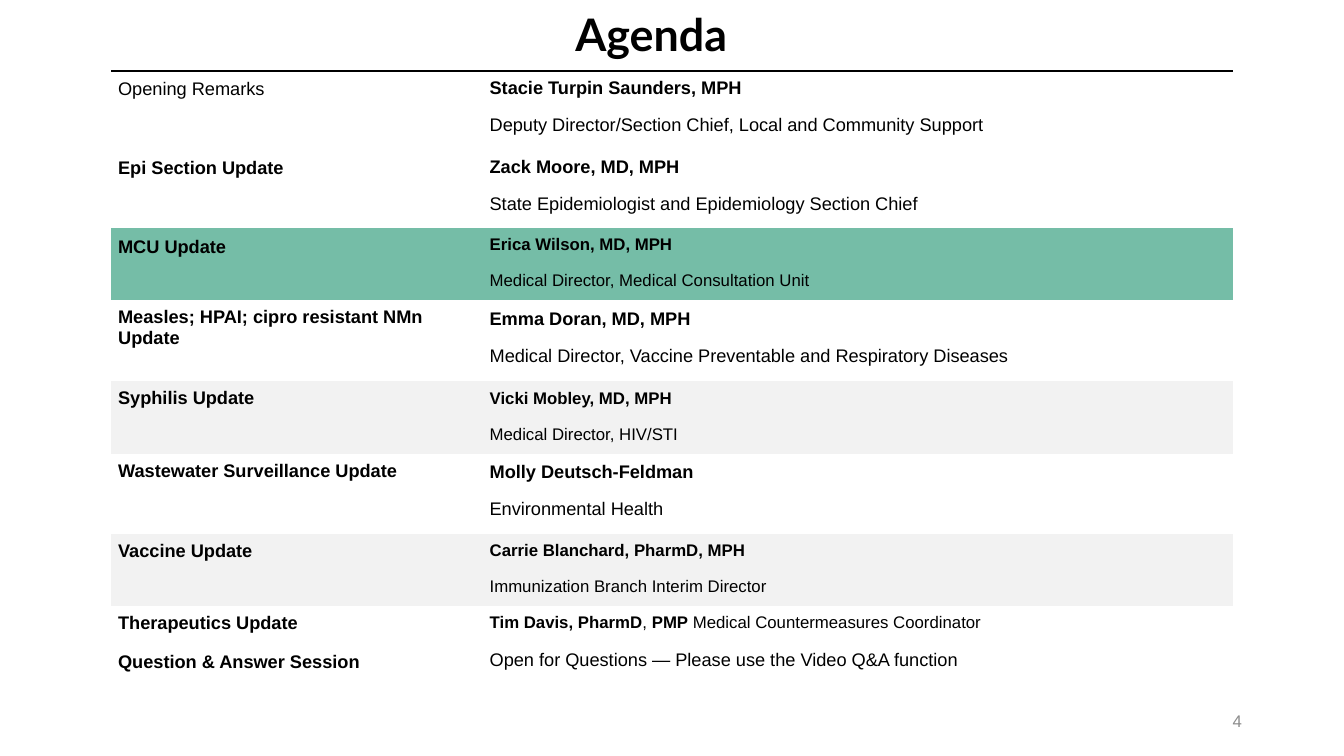
import pptx
import pptx.dml.color
import pptx.enum.text
import pptx.oxml
import pptx.oxml.ns
import pptx.util
from pptx.util import Pt

BLACK = pptx.dml.color.RGBColor(0x00, 0x00, 0x00)
GREY = pptx.dml.color.RGBColor(0x8C, 0x8C, 0x8C)
GREEN = pptx.dml.color.RGBColor(0x75, 0xBD, 0xA7)
PALE = pptx.dml.color.RGBColor(0xF2, 0xF2, 0xF2)
BOLD, PLAIN = True, False
LOOSE = 1.07


def add_run(paragraph, text, size, bold=False, font="Arial", color=BLACK):
    run = paragraph.add_run()
    run.text = text
    run.font.name = font
    run.font.size = Pt(size)
    run.font.bold = bold
    run.font.color.rgb = color


def add_text_box(left, top, width, height):
    frame = slide.shapes.add_textbox(Pt(left), Pt(top), Pt(width), Pt(height)).text_frame
    frame.word_wrap = True
    return frame


presentation = pptx.Presentation()
presentation.slide_width = Pt(960)
presentation.slide_height = Pt(540)
slide = presentation.slides.add_slide(presentation.slide_layouts[6])

# Slide number
number_frame = add_text_box(678.2, 500.4, 216, 28.8)
number_frame.vertical_anchor = pptx.enum.text.MSO_ANCHOR.MIDDLE
number_frame.paragraphs[0].alignment = pptx.enum.text.PP_ALIGN.RIGHT
add_run(number_frame.paragraphs[0], "4", 12, color=GREY)

# Agenda rows: height, fill, topic, topic weight, speaker size, speaker paragraphs,
# line spacing of the topic and of the first speaker paragraph
agenda = [
    (56.2, None, "Opening Remarks", PLAIN, 13,
     [[("Stacie Turpin Saunders, MPH", BOLD)],
      [("Deputy Director/Section Chief, Local and Community Support", PLAIN)]], LOOSE, None),
    (56.2, None, "Epi Section Update", BOLD, 13,
     [[("Zack Moore, MD, MPH", BOLD)],
      [("State Epidemiologist and Epidemiology Section Chief", PLAIN)]], LOOSE, None),
    (51.5, GREEN, "MCU Update", BOLD, 12,
     [[("Erica Wilson, MD, MPH", BOLD)],
      [("Medical Director, Medical Consultation Unit", PLAIN)]], LOOSE, None),
    (57.6, None, "Measles; HPAI; cipro resistant NMn Update", BOLD, 13,
     [[("Emma Doran, MD, MPH", BOLD)],
      [("Medical Director, Vaccine Preventable and Respiratory Diseases", PLAIN)]], None, LOOSE),
    (51.5, PALE, "Syphilis Update", BOLD, 12,
     [[("Vicki Mobley, MD, MPH", BOLD)],
      [("Medical Director, HIV/STI", PLAIN)]], None, LOOSE),
    (57.6, None, "Wastewater Surveillance Update", BOLD, 13,
     [[("Molly Deutsch-Feldman", BOLD)],
      [("Environmental Health", PLAIN)]], None, LOOSE),
    (51.5, PALE, "Vaccine Update", BOLD, 12,
     [[("Carrie Blanchard, PharmD, MPH", BOLD)],
      [("Immunization Branch Interim Director", PLAIN)]], None, None),
    (26.5, None, "Therapeutics Update", BOLD, 12,
     [[("Tim Davis, PharmD", BOLD), (", ", PLAIN), ("PMP", BOLD),
       (" Medical Countermeasures Coordinator", PLAIN)]], None, None),
    (28.8, None, "Question & Answer Session", BOLD, 13,
     [[("Open for Questions — Please use the Video Q&A function", PLAIN)]], LOOSE, None),
]

# Agenda table
table = slide.shapes.add_table(
    len(agenda), 2, Pt(79.4), Pt(50.7), Pt(801.6), Pt(sum(row[0] for row in agenda))).table
table.first_row = False
table.horz_banding = False
table.columns[0].width = Pt(265.4)
table.columns[1].width = Pt(536.2)

for row_index, (height, fill, topic, weight, size, speaker, *spacings) in enumerate(agenda):
    table.rows[row_index].height = Pt(height)
    contents = [(13, [[(topic, weight)]]), (size, speaker)]
    for column_index, (text_size, lines) in enumerate(contents):
        cell = table.cell(row_index, column_index)
        cell.margin_left = cell.margin_right = Pt(5)
        cell.margin_top = cell.margin_bottom = Pt(5)

        # Borders: only the rule above the first row is drawn
        properties = cell._tc.get_or_add_tcPr()
        for side in ("lnL", "lnR", "lnT", "lnB"):
            border = pptx.oxml.parse_xml(
                f'<a:{side} {pptx.oxml.ns.nsdecls("a")} w="{Pt(2.25)}"/>')
            if side == "lnT" and row_index == 0:
                solid = border.makeelement(pptx.oxml.ns.qn("a:solidFill"))
                solid.append(solid.makeelement(pptx.oxml.ns.qn("a:srgbClr"), {"val": str(BLACK)}))
                border.append(solid)
            else:
                border.append(border.makeelement(pptx.oxml.ns.qn("a:noFill")))
            properties.append(border)

        if fill is None:
            cell.fill.background()
        else:
            cell.fill.solid()
            cell.fill.fore_color.rgb = fill

        for line_index, runs in enumerate(lines):
            if line_index == 0:
                paragraph = cell.text_frame.paragraphs[0]
                paragraph.line_spacing = spacings[column_index]
            else:
                paragraph = cell.text_frame.add_paragraph()
                paragraph.space_before = Pt(6)
            paragraph.space_after = Pt(6)
            for text, bold in runs:
                add_run(paragraph, text, text_size, bold)

# Title
title_frame = add_text_box(403.9, 1.4, 348.5, 46.1)
add_run(title_frame.paragraphs[0], "Agenda", 32, BOLD, "Lato")

presentation.save("out.pptx")
